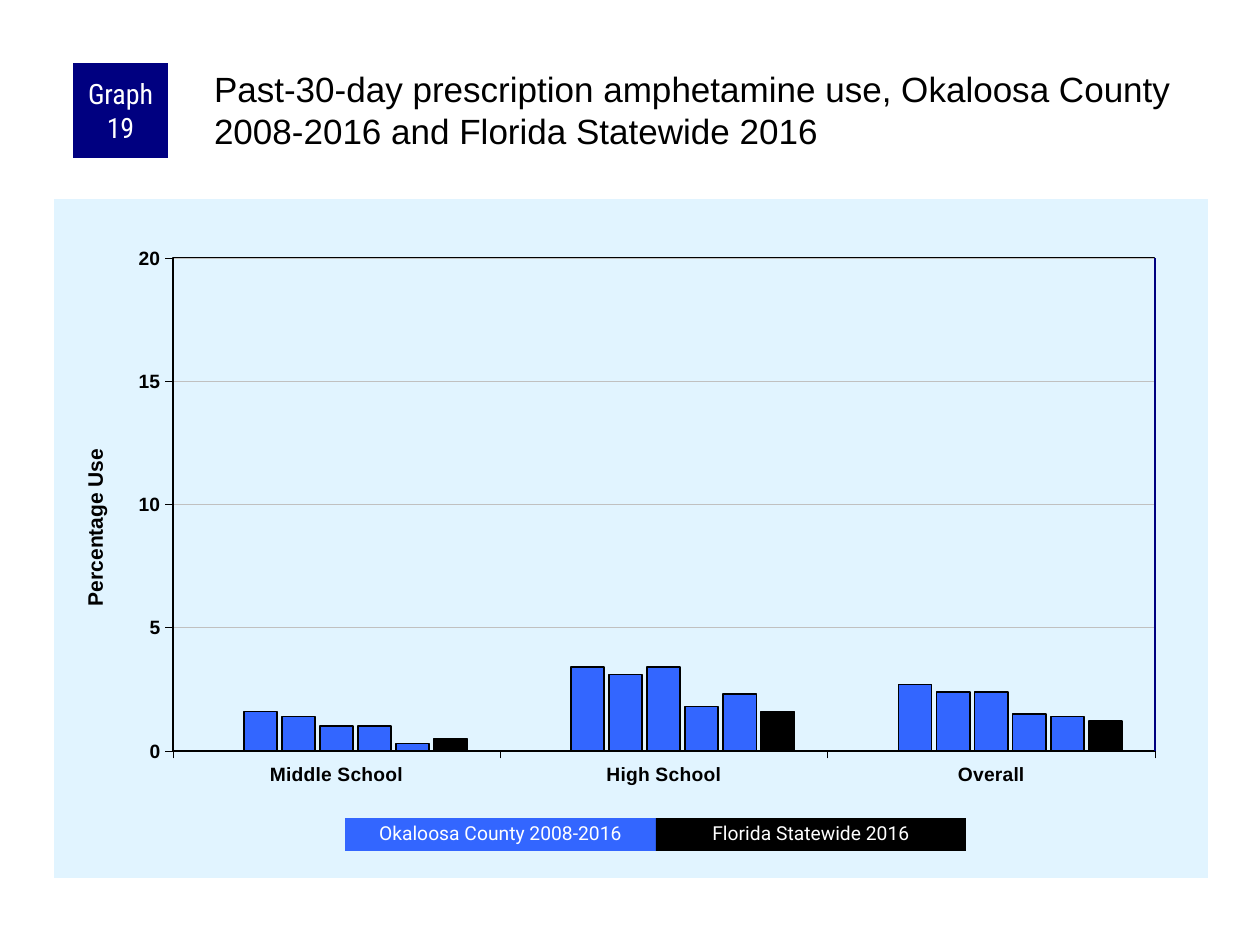
from dataclasses import dataclass

import lxml.etree
import pptx
import pptx.chart.data
import pptx.dml.color
import pptx.enum.chart
import pptx.enum.shapes
import pptx.enum.text
import pptx.oxml.ns
import pptx.util

EMU_PER_PX = 914400 / 126
qn = pptx.oxml.ns.qn


def px(length: int) -> pptx.util.Emu:
    return pptx.util.Emu(round(length * EMU_PER_PX))


@dataclass(frozen=True)
class Theme:
    navy: str = "000080"
    blue: str = "3366FF"
    black: str = "000000"
    white: str = "FFFFFF"
    panel: str = "E1F4FF"
    grid: str = "C0C0C0"
    text_font: str = "Arial"
    label_font: str = "Roboto"
    badge_font: str = "Roboto Condensed"
    title_size: int = 20
    badge_size: int = 16
    axis_title_size: int = 12
    label_size: int = 11


@dataclass(frozen=True)
class Box:
    left: int
    top: int
    width: int
    height: int

    def emu(self) -> tuple:
        return px(self.left), px(self.top), px(self.width), px(self.height)


@dataclass(frozen=True)
class Label:
    text: str
    box: Box
    fill: str
    font: str
    size: int
    margin: int
    line_spacing: float


THEME = Theme()
TITLE = "Past-30-day prescription amphetamine use, Okaloosa County 2008-2016 and Florida Statewide 2016"
TITLE_BOX = Box(210, 63, 998, 105)
CHART_BOX = Box(54, 199, 1154, 679)
PLOT_BOX = Box(173, 258, 982, 493)
AXIS_TITLE_LEFT, AXIS_TITLE_TOP = 78, 445

LABELS = [
    Label("Graph 19", Box(73, 63, 95, 95), THEME.navy, THEME.badge_font, THEME.badge_size, 6, 1.0),
    Label("Okaloosa County 2008-2016", Box(345, 818, 311, 33), THEME.blue,
          THEME.label_font, THEME.label_size, 12, 0.9),
    Label("Florida Statewide 2016", Box(656, 818, 310, 33), THEME.black,
          THEME.label_font, THEME.label_size, 12, 0.9),
]

CATEGORIES = ["Middle School", "High School", "Overall"]
SERIES_VALUES = [
    (0, 0, 0),
    (1.6, 3.4, 2.7),
    (1.4, 3.1, 2.4),
    (1, 3.4, 2.4),
    (1, 1.8, 1.5),
    (0.3, 2.3, 1.4),
    (0.5, 1.6, 1.2),
]


def color(value: str) -> pptx.dml.color.RGBColor:
    return pptx.dml.color.RGBColor.from_string(value)


def set_font(font, name: str, size: int, rgb: str, bold: bool = False) -> None:
    font.name, font.size, font.bold = name, pptx.util.Pt(size), bold
    font.color.rgb = color(rgb)


def set_line(line, rgb: str, width: float) -> None:
    line.color.rgb = color(rgb)
    line.width = pptx.util.Pt(width)


def set_layout(parent, index: int, **values) -> None:
    """Give a chart part a manual layout, in fractions of the chart."""
    for old in parent.findall(qn("c:layout")):
        parent.remove(old)
    layout = lxml.etree.Element(qn("c:layout"))
    manual = lxml.etree.SubElement(layout, qn("c:manualLayout"))
    for name, value in values.items():
        lxml.etree.SubElement(manual, qn(f"c:{name}")).set("val", str(value))
    parent.insert(index, layout)


def set_shape_properties(plot_area, rgb: str, width: float) -> None:
    """Outline the plot area and leave it without a fill."""
    properties = lxml.etree.SubElement(plot_area, qn("c:spPr"))
    lxml.etree.SubElement(properties, qn("a:noFill"))
    line = lxml.etree.SubElement(properties, qn("a:ln"), w=str(pptx.util.Pt(width)))
    fill = lxml.etree.SubElement(line, qn("a:solidFill"))
    lxml.etree.SubElement(fill, qn("a:srgbClr"), val=rgb)


def fill_chart_background(chart, rgb: str) -> None:
    properties = lxml.etree.Element(qn("c:spPr"))
    fill = lxml.etree.SubElement(properties, qn("a:solidFill"))
    lxml.etree.SubElement(fill, qn("a:srgbClr"), val=rgb)
    line = lxml.etree.SubElement(properties, qn("a:ln"))
    lxml.etree.SubElement(line, qn("a:noFill"))
    chart._chartSpace.chart.addnext(properties)


def format_axes(chart) -> None:
    for axis in (chart.category_axis, chart.value_axis):
        axis.major_tick_mark = pptx.enum.chart.XL_TICK_MARK.OUTSIDE
        axis.minor_tick_mark = pptx.enum.chart.XL_TICK_MARK.NONE
        set_line(axis.format.line, THEME.black, 0.25)
        set_font(axis.tick_labels.font, THEME.text_font, THEME.label_size, THEME.black, True)
    axis = chart.value_axis
    axis.minimum_scale, axis.maximum_scale, axis.major_unit = 0, 20, 5
    set_line(axis.major_gridlines.format.line, THEME.grid, 0.25)

    text_frame = axis.axis_title.text_frame
    text_frame.text = "Percentage Use"
    text_frame._txBody.bodyPr.set("rot", "-5400000")
    text_frame._txBody.bodyPr.set("vert", "horz")
    set_font(text_frame.paragraphs[0].font, THEME.text_font, THEME.axis_title_size, THEME.black, True)
    set_layout(axis.axis_title._element, 1, xMode="edge", yMode="edge",
               x=round((AXIS_TITLE_LEFT - CHART_BOX.left) / CHART_BOX.width, 3),
               y=round((AXIS_TITLE_TOP - CHART_BOX.top) / CHART_BOX.height, 3))


def add_use_chart(slide: pptx.slide.Slide) -> None:
    data = pptx.chart.data.CategoryChartData()
    data.categories = CATEGORIES
    for number, values in enumerate(SERIES_VALUES, 1):
        data.add_series(f"Series {number}", values)
    chart = slide.shapes.add_chart(
        pptx.enum.chart.XL_CHART_TYPE.COLUMN_CLUSTERED, *CHART_BOX.emu(), data).chart
    chart.has_legend = chart.has_title = False
    set_font(chart.font, THEME.text_font, 8, THEME.black)
    fill_chart_background(chart, THEME.panel)
    format_axes(chart)

    plot = chart.plots[0]
    plot.gap_width, plot.overlap, plot.vary_by_categories = 200, -15, False
    for number, series in enumerate(plot.series, 1):
        series.format.fill.solid()
        statewide = number == len(SERIES_VALUES)
        series.format.fill.fore_color.rgb = color(THEME.black if statewide else THEME.blue)
        set_line(series.format.line, THEME.black, 1)

    plot_area = chart._chartSpace.chart.plotArea
    set_layout(plot_area, 0, layoutTarget="inner", xMode="edge", yMode="edge",
               x=round((PLOT_BOX.left - CHART_BOX.left) / CHART_BOX.width, 3),
               y=round((PLOT_BOX.top - CHART_BOX.top) / CHART_BOX.height, 3),
               w=round(PLOT_BOX.width / CHART_BOX.width, 3),
               h=round(PLOT_BOX.height / CHART_BOX.height, 3))
    set_shape_properties(plot_area, THEME.black, 0.75)


def add_plot_edge(slide: pptx.slide.Slide) -> None:
    right = px(PLOT_BOX.left + PLOT_BOX.width)
    edge = slide.shapes.add_connector(
        pptx.enum.shapes.MSO_CONNECTOR.STRAIGHT,
        right, px(PLOT_BOX.top), right, px(PLOT_BOX.top + PLOT_BOX.height))
    set_line(edge.line, THEME.navy, 1)
    lxml.etree.SubElement(edge._element.spPr, qn("a:effectLst"))


def add_label(slide: pptx.slide.Slide, label: Label) -> None:
    shape = slide.shapes.add_shape(pptx.enum.shapes.MSO_SHAPE.RECTANGLE, *label.box.emu())
    shape.shadow.inherit = False
    shape.fill.solid()
    shape.fill.fore_color.rgb = color(label.fill)
    shape.line.fill.background()
    text_frame = shape.text_frame
    text_frame.text = label.text
    text_frame.word_wrap = True
    text_frame.vertical_anchor = pptx.enum.text.MSO_ANCHOR.MIDDLE
    text_frame.margin_left = text_frame.margin_right = px(label.margin)
    text_frame.margin_top = text_frame.margin_bottom = 0
    paragraph = text_frame.paragraphs[0]
    paragraph.alignment = pptx.enum.text.PP_ALIGN.CENTER
    paragraph.line_spacing = label.line_spacing
    set_font(paragraph.font, label.font, label.size, THEME.white)


def fill_title(slide: pptx.slide.Slide) -> None:
    title = slide.shapes.title
    title.left, title.top, title.width, title.height = TITLE_BOX.emu()
    text_frame = title.text_frame
    text_frame.text = TITLE
    text_frame.word_wrap = True
    text_frame.auto_size = pptx.enum.text.MSO_AUTO_SIZE.NONE
    text_frame.vertical_anchor = pptx.enum.text.MSO_ANCHOR.TOP
    text_frame.margin_left = text_frame.margin_top = px(4)
    text_frame.margin_right = text_frame.margin_bottom = 0
    paragraph = text_frame.paragraphs[0]
    paragraph.alignment = pptx.enum.text.PP_ALIGN.LEFT
    set_font(paragraph.font, THEME.text_font, THEME.title_size, THEME.black)


def main() -> None:
    presentation = pptx.Presentation()
    presentation.slide_width, presentation.slide_height = px(1260), px(945)
    slide = presentation.slides.add_slide(presentation.slide_layouts[5])
    fill_title(slide)
    add_use_chart(slide)
    add_plot_edge(slide)
    for label in LABELS:
        add_label(slide, label)
    presentation.save("out.pptx")


if __name__ == "__main__":
    main()
